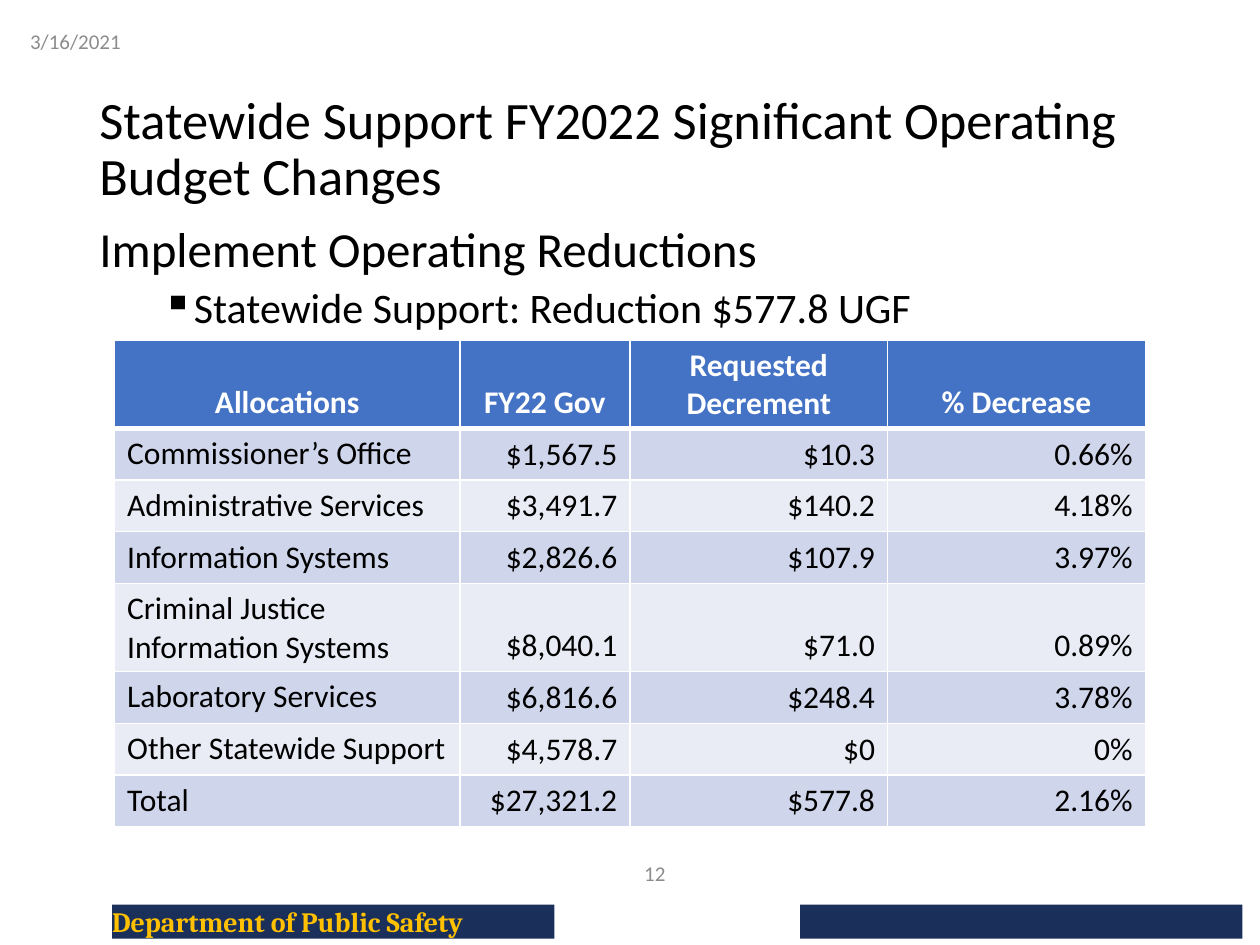
from lxml import etree
from pptx import Presentation
from pptx.dml.color import RGBColor
from pptx.enum.shapes import MSO_SHAPE
from pptx.enum.text import MSO_ANCHOR, MSO_AUTO_SIZE, PP_ALIGN
from pptx.oxml.ns import qn
from pptx.util import Inches, Pt

RECT = MSO_SHAPE.RECTANGLE
TOP, MIDDLE, BOTTOM = MSO_ANCHOR.TOP, MSO_ANCHOR.MIDDLE, MSO_ANCHOR.BOTTOM
LEFT, CENTER, RIGHT = PP_ALIGN.LEFT, PP_ALIGN.CENTER, PP_ALIGN.RIGHT
GROW = MSO_AUTO_SIZE.SHAPE_TO_FIT_TEXT

COLORS = {"navy": "1A2F5A", "gold": "FFC000", "black": "000000", "gray": "8C8C8C",
          "white": "FFFFFF", "header": "4472C4", "band1": "CFD5EA", "band2": "E9EBF5"}


def color(name):
    return RGBColor.from_string(COLORS[name])


def write(p, text, size=18, ink="black", font="Calibri", bold=False, align=LEFT,
          spacing=None, before=None, bullet=None, level=0, indent=(0, 0)):
    """Fill one paragraph with formatted text."""
    if bullet:
        pPr = p._p.get_or_add_pPr()
        pPr.set("marL", str(Inches(indent[0])))
        pPr.set("indent", str(Inches(indent[1])))
        etree.SubElement(pPr, qn("a:buChar"), char=bullet)
    p.level, p.alignment = level, align
    if spacing:
        p.line_spacing = spacing
    if before:
        p.space_before = Pt(before)
    r = p.add_run()
    r.text = text
    r.font.name, r.font.size, r.font.bold = font, Pt(size), bold
    r.font.color.rgb = color(ink)


class Deck:
    """Holds the current slide; lengths are cells of a 100 by 75 grid."""
    COLS, ROWS = 100, 75

    def __init__(self, width=10, height=7.5):
        self.prs = Presentation()
        self.prs.slide_width, self.prs.slide_height = Inches(width), Inches(height)
        self.s = self.prs.slides.add_slide(self.prs.slide_layouts[6])

    def x(self, cols):
        return round(self.prs.slide_width * cols / self.COLS)

    def y(self, rows):
        return round(self.prs.slide_height * rows / self.ROWS)

    def box(self, left, top, width, height):
        return self.x(left), self.y(top), self.x(width), self.y(height)

    def bar(self, *at, text=None, **fmt):
        sp = self.s.shapes.add_shape(RECT, *self.box(*at))
        sp.shadow.inherit = False
        sp.fill.solid()
        sp.fill.fore_color.rgb = color("navy")
        sp.line.fill.background()
        if text:
            tf = sp.text_frame
            tf.word_wrap, tf.auto_size, tf.vertical_anchor = True, GROW, TOP
            tf.margin_left = tf.margin_right = tf.margin_top = tf.margin_bottom = 0
            write(tf.paragraphs[0], text, **fmt)

    def text(self, *at, lines, anchor=MIDDLE):
        tf = self.s.shapes.add_textbox(*self.box(*at)).text_frame
        tf.word_wrap, tf.vertical_anchor = True, anchor
        for i, (text, fmt) in enumerate(lines):
            write(tf.add_paragraph() if i else tf.paragraphs[0], text, **fmt)

    def borders(self, cell, **widths):
        tcPr = cell._tc.get_or_add_tcPr()
        for side in "LRTB":
            ln = etree.SubElement(tcPr, qn("a:ln" + side), w=str(Pt(widths.get(side, 1))))
            fill = etree.SubElement(ln, qn("a:solidFill"))
            etree.SubElement(fill, qn("a:srgbClr"), val=COLORS["white"])

    def table(self, left, top, widths, row_height, rows):
        at = self.box(left, top, sum(widths), row_height * len(rows))
        tbl = self.s.shapes.add_table(len(rows), len(widths), *at).table
        for col, width in zip(tbl.columns, widths):
            col.width = self.x(width)
        for i, row in enumerate(rows):
            tbl.rows[i].height = self.y(row_height)
            for j, text in enumerate(row):
                cell = tbl.cell(i, j)
                head, label = i == 0, j == 0
                self.borders(cell, B=3 if head else 1, T=3 if i == 1 else 1)
                cell.fill.solid()
                cell.fill.fore_color.rgb = color(
                    "header" if head else "band1" if i % 2 else "band2")
                cell.vertical_anchor = TOP if label and not head else BOTTOM
                write(cell.text_frame.paragraphs[0], text, bold=head,
                      ink="white" if head else "black",
                      align=CENTER if head else LEFT if label else RIGHT)


ALLOCATIONS = [
    ("Allocations", "FY22 Gov", "Requested Decrement", "% Decrease"),
    ("Commissioner’s Office", "$1,567.5", "$10.3", "0.66%"),
    ("Administrative Services", "$3,491.7", "$140.2", "4.18%"),
    ("Information Systems", "$2,826.6", "$107.9", "3.97%"),
    ("Criminal Justice Information Systems", "$8,040.1", "$71.0", "0.89%"),
    ("Laboratory Services", "$6,816.6", "$248.4", "3.78%"),
    ("Other Statewide Support", "$4,578.7", "$0", "0%"),
    ("Total", "$27,321.2", "$577.8", "2.16%"),
]


def main():
    deck = Deck()

    # Footer bars
    deck.bar(63.5, 71.8, 35.1, 2.7)
    deck.bar(8.9, 71.8, 35.1, 2.7, text="Department of Public Safety",
             size=16, font="Cambria", ink="gold", bold=True)

    # Title and body
    deck.text(6.9, 6.5, 86.2, 10.9, lines=[
        ("Statewide Support FY2022 Significant Operating Budget Changes",
         dict(size=30, spacing=0.9))])
    deck.text(6.9, 17.4, 86.2, 46.1, anchor=TOP, lines=[
        ("Implement Operating Reductions", dict(size=28, spacing=0.9)),
        ("Statewide Support: Reduction $577.8 UGF",
         dict(size=24, spacing=0.9, before=5, bullet="▪", level=1, indent=(0.75, -0.25)))])

    # Date and slide number
    small = dict(size=12, ink="gray")
    deck.text(1.4, 1.3, 22.5, 4, lines=[("3/16/2021", small)])
    deck.text(31.3, 67.3, 22.5, 4, lines=[("12", dict(small, align=RIGHT))])

    # Allocation table
    deck.table(9.1, 27, (27.4, 13.5, 20.45, 20.45), 4.1, ALLOCATIONS)

    deck.prs.save("out.pptx")


if __name__ == "__main__":
    main()
